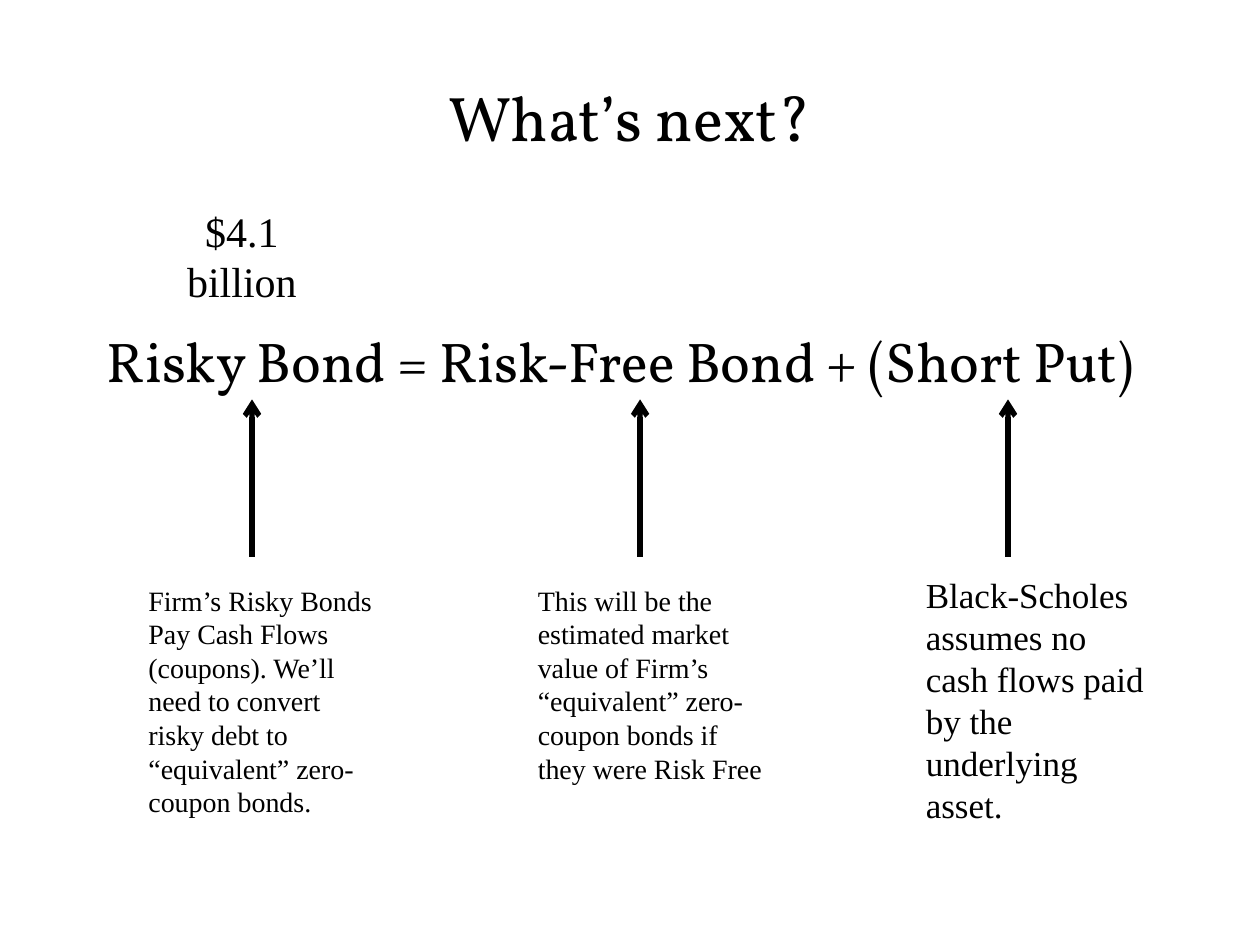
import pptx
import pptx.util
import pptx.dml.color
import pptx.enum.shapes
import pptx.enum.text
import pptx.oxml
import pptx.oxml.ns

Inches = pptx.util.Inches
Align = pptx.enum.text.PP_ALIGN
Anchor = pptx.enum.text.MSO_ANCHOR
COLORS = {"ink": "000000", "page": "FFFFFF"}
HEAD = "Vollkorn"
BODY = "Times New Roman"


def color(name):
    """Return the named colour."""
    return pptx.dml.color.RGBColor.from_string(COLORS[name])


def write(slide, box, text, size, font=BODY, align=Align.LEFT, anchor=Anchor.TOP):
    """Write one wrapped paragraph in a box."""
    frame = slide.shapes.add_textbox(*map(Inches, box)).text_frame
    frame.word_wrap = True
    frame.vertical_anchor = anchor
    para = frame.paragraphs[0]
    para.alignment = align
    run = para.add_run()
    run.text = text
    run.font.size = pptx.util.Pt(size)
    run.font.name = font
    run.font.color.rgb = color("ink")


def arrow(slide, x, low, high):
    """Draw an arrow straight up from low to high."""
    kind = pptx.enum.shapes.MSO_CONNECTOR.STRAIGHT
    line = slide.shapes.add_connector(
        kind, Inches(x), Inches(low), Inches(x), Inches(high))
    line.line.color.rgb = color("ink")
    line.line.width = pptx.util.Pt(3)
    props = line._element.spPr
    tip = pptx.oxml.parse_xml(
        f'<a:tailEnd {pptx.oxml.ns.nsdecls("a")} type="arrow"/>')
    props.find(pptx.oxml.ns.qn("a:ln")).append(tip)
    props.append(props.makeelement(pptx.oxml.ns.qn("a:effectLst"), {}))


def header(slide, box):
    """Place the slide title."""
    write(slide, box, "What’s next?", 36, HEAD, Align.CENTER, Anchor.MIDDLE)


def formula(slide, box):
    """Place the bond equation with the amount above its first term."""
    left, top, width, height = box
    write(slide, (left + 0.42, top, 1.5, 0.91), "$4.1 billion", 24,
          align=Align.CENTER)
    write(slide, (left, top + 0.92, width, height - 0.92),
          "Risky Bond = Risk-Free Bond + (Short Put)", 32, HEAD,
          anchor=Anchor.MIDDLE)


def notes(slide, box):
    """Place each term's note with an arrow up to the equation."""
    left, top, width, height = box
    terms = (
        (0, 0.92, 1.41, 16, "Firm’s Risky Bonds Pay Cash Flows (coupons). We’ll "
         "need to convert risky debt to “equivalent” zero-coupon bonds."),
        (3.09, 4, 1.41, 16, "This will be the estimated market value of Firm’s "
         "“equivalent” zero-coupon bonds if they were Risk Free"),
        (6.17, 6.92, 1.33, 20, "Black-Scholes assumes no cash flows paid by the "
         "underlying asset."),
    )
    for shift, stem, drop, size, text in terms:
        arrow(slide, left + stem, top + 1.25, top)
        write(slide, (left + shift, top + drop, 2, height - drop), text, size)


def main():
    """Build and save the slide."""
    deck = pptx.Presentation()
    deck.slide_width, deck.slide_height = Inches(10), Inches(7.5)
    slide = deck.slides.add_slide(deck.slide_layouts[6])
    slide.background.fill.solid()
    slide.background.fill.fore_color.rgb = color("page")
    header(slide, (0.75, 0.42, 8.5, 1))
    formula(slide, (0.75, 1.58, 8.83, 1.64))
    notes(slide, (1.08, 3.17, 8.17, 3.4))
    deck.save("out.pptx")


if __name__ == "__main__":
    main()
